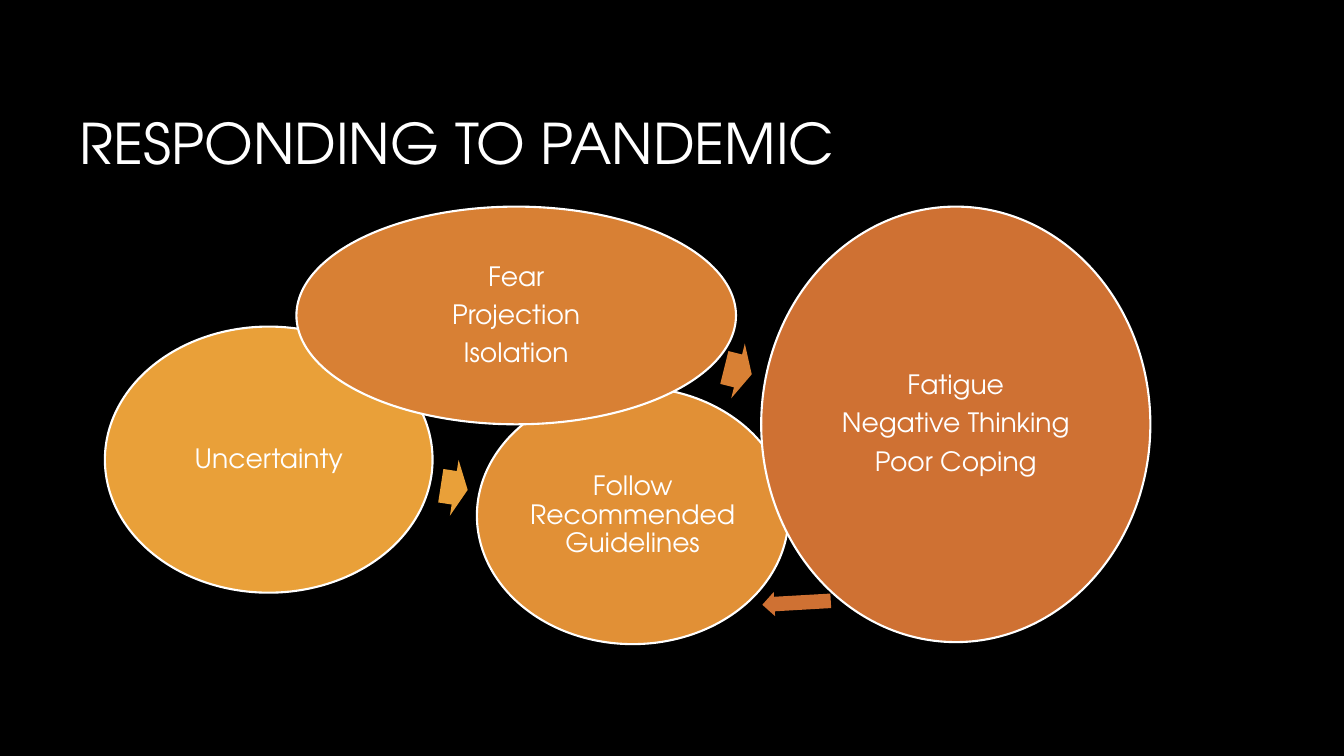
import pptx
import pptx.util
import pptx.dml.color
import pptx.enum.shapes
import pptx.enum.text

Inches = pptx.util.Inches
Pt = pptx.util.Pt

TITLE = "RESPONDING TO PANDEMIC"
FONT = "TeX Gyre Adventor"
COLORS = {
    "background": "000000",
    "text": "FFFFFF",
    "outline": "FFFFFF",
    "uncertainty": "E9A039",
    "guidelines": "E19036",
    "fear": "D88034",
    "fatigue": "CF7133",
}
TITLE_BOX = (0.69, 0.37, 10.83, 2.08)
STAGES = [
    {"color": "uncertainty", "box": (1.04, 3.24, 3.25, 2.64), "lines": ["Uncertainty"],
     "arrow": (4.37, 4.56, 0.27, 0.56), "angle": 8.8},
    {"color": "guidelines", "box": (4.73, 3.84, 3.09, 2.55),
     "lines": ["Follow Recommended Guidelines"]},
    {"color": "fear", "box": (2.94, 2.05, 4.36, 2.16),
     "lines": ["Fear", "Projection", "Isolation"],
     "arrow": (7.18, 3.4, 0.28, 0.56), "angle": 13.9},
    {"color": "fatigue", "box": (7.55, 2.05, 3.86, 4.32),
     "lines": ["Fatigue", "Negative Thinking", "Poor Coping"],
     "arrow": (7.56, 5.86, 0.68, 0.24), "angle": 176.7},
]
STAGE_FRAME = {
    "word_wrap": True,
    "vertical_anchor": pptx.enum.text.MSO_ANCHOR.MIDDLE,
    "margin_left": Inches(0.03),
    "margin_right": Inches(0.03),
    "margin_top": Inches(0.03),
    "margin_bottom": Inches(0.03),
}
STAGE_PARAGRAPH = {
    "alignment": pptx.enum.text.PP_ALIGN.CENTER,
    "line_spacing": 0.9,
    "space_after": Pt(6.65),
}


def color(name):
    return pptx.dml.color.RGBColor.from_string(COLORS[name])


def apply(target, values):
    for name, value in values.items():
        setattr(target, name, value)


def write(para, text, size):
    span = para.add_run()
    span.text = text
    apply(span.font, {"name": FONT, "size": Pt(size)})
    span.font.color.rgb = color("text")


def add_filled(slide, kind, box, fill):
    shape = slide.shapes.add_shape(kind, *map(Inches, box))
    shape.shadow.inherit = False
    shape.fill.solid()
    shape.fill.fore_color.rgb = color(fill)
    return shape


def add_stage(slide, stage):
    kinds = pptx.enum.shapes.MSO_SHAPE
    ellipse = add_filled(slide, kinds.OVAL, stage["box"], stage["color"])
    ellipse.line.color.rgb = color("outline")
    ellipse.line.width = Pt(1.5)
    frame = ellipse.text_frame
    apply(frame, STAGE_FRAME)
    for index, line in enumerate(stage["lines"]):
        para = frame.add_paragraph() if index else frame.paragraphs[0]
        apply(para, STAGE_PARAGRAPH)
        write(para, line, 19)
    if "arrow" in stage:
        arrow = add_filled(slide, kinds.RIGHT_ARROW, stage["arrow"], stage["color"])
        arrow.line.fill.background()
        arrow.adjustments[0] = 0.6
        arrow.adjustments[1] = 0.5
        arrow.rotation = stage["angle"]


def add_title(slide):
    title = slide.shapes.title
    places = map(Inches, TITLE_BOX)
    apply(title, dict(zip(("left", "top", "width", "height"), places)))
    frame = title.text_frame
    apply(frame, {"word_wrap": True,
                  "vertical_anchor": pptx.enum.text.MSO_ANCHOR.MIDDLE})
    para = frame.paragraphs[0]
    para.alignment = pptx.enum.text.PP_ALIGN.LEFT
    write(para, TITLE, 40)


def main():
    deck = pptx.Presentation()
    apply(deck, {"slide_width": Inches(13.33), "slide_height": Inches(7.5)})
    page = deck.slides.add_slide(deck.slide_layouts[5])
    page.background.fill.solid()
    page.background.fill.fore_color.rgb = color("background")
    add_title(page)
    for stage in STAGES:
        add_stage(page, stage)
    deck.save("out.pptx")


if __name__ == "__main__":
    main()
